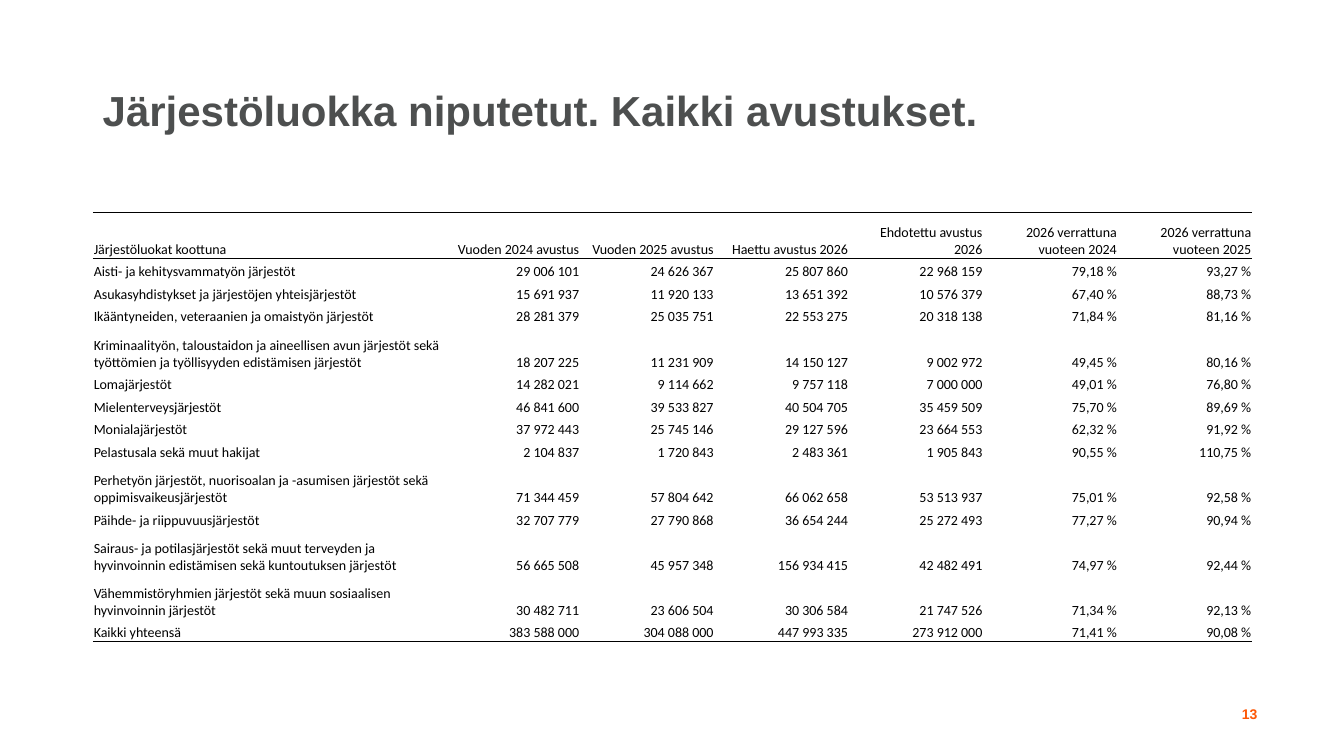
from lxml import etree
from pptx import Presentation
from pptx.dml.color import RGBColor
from pptx.enum.text import MSO_ANCHOR, PP_ALIGN
from pptx.oxml.ns import qn
from pptx.util import Inches, Pt

LEFT, RIGHT = PP_ALIGN.LEFT, PP_ALIGN.RIGHT
TOP, MIDDLE, BOTTOM = MSO_ANCHOR.TOP, MSO_ANCHOR.MIDDLE, MSO_ANCHOR.BOTTOM

SLIDE_WIDTH, SLIDE_HEIGHT = 13.33, 7.5
BLACK, GREY, ORANGE = "000000", "4D4F4F", "FD5705"

# Boxes: left, top, width, height in inches
TITLE_BOX = (0.92, 0.4, 8.99, 1.45)
TABLE_BOX = (0.92, 2.11, 11.5, 4.26)
NUMBER_BOX = (11.69, 6.95, 0.88, 0.4)

NAME_COLUMN_WIDTH = 3.5
RULE_WIDTH = 0.5
TALL_ROWS = {0, 4, 9, 11, 12}  # two lines of text each

ROWS = [
    ("Järjestöluokat koottuna", "Vuoden 2024 avustus", "Vuoden 2025 avustus",
     "Haettu avustus 2026", "Ehdotettu avustus 2026",
     "2026 verrattuna vuoteen 2024", "2026 verrattuna vuoteen 2025"),
    ("Aisti- ja kehitysvammatyön järjestöt",
     "29 006 101", "24 626 367", "25 807 860", "22 968 159", "79,18 %", "93,27 %"),
    ("Asukasyhdistykset ja järjestöjen yhteisjärjestöt",
     "15 691 937", "11 920 133", "13 651 392", "10 576 379", "67,40 %", "88,73 %"),
    ("Ikääntyneiden, veteraanien ja omaistyön järjestöt",
     "28 281 379", "25 035 751", "22 553 275", "20 318 138", "71,84 %", "81,16 %"),
    ("Kriminaalityön, taloustaidon ja aineellisen avun järjestöt sekä "
     "työttömien ja työllisyyden edistämisen järjestöt",
     "18 207 225", "11 231 909", "14 150 127", "9 002 972", "49,45 %", "80,16 %"),
    ("Lomajärjestöt",
     "14 282 021", "9 114 662", "9 757 118", "7 000 000", "49,01 %", "76,80 %"),
    ("Mielenterveysjärjestöt",
     "46 841 600", "39 533 827", "40 504 705", "35 459 509", "75,70 %", "89,69 %"),
    ("Monialajärjestöt",
     "37 972 443", "25 745 146", "29 127 596", "23 664 553", "62,32 %", "91,92 %"),
    ("Pelastusala sekä muut hakijat",
     "2 104 837", "1 720 843", "2 483 361", "1 905 843", "90,55 %", "110,75 %"),
    ("Perhetyön järjestöt, nuorisoalan ja -asumisen järjestöt sekä "
     "oppimisvaikeusjärjestöt",
     "71 344 459", "57 804 642", "66 062 658", "53 513 937", "75,01 %", "92,58 %"),
    ("Päihde- ja riippuvuusjärjestöt",
     "32 707 779", "27 790 868", "36 654 244", "25 272 493", "77,27 %", "90,94 %"),
    ("Sairaus- ja potilasjärjestöt sekä muut terveyden ja "
     "hyvinvoinnin edistämisen sekä kuntoutuksen järjestöt",
     "56 665 508", "45 957 348", "156 934 415", "42 482 491", "74,97 %", "92,44 %"),
    ("Vähemmistöryhmien järjestöt sekä muun sosiaalisen hyvinvoinnin järjestöt",
     "30 482 711", "23 606 504", "30 306 584", "21 747 526", "71,34 %", "92,13 %"),
    ("Kaikki yhteensä",
     "383 588 000", "304 088 000", "447 993 335", "273 912 000", "71,41 %", "90,08 %"),
]


def color(hex_text):
    return RGBColor.from_string(hex_text)


def write(paragraph, text, font_name, size, hex_color, bold=False, align=LEFT):
    paragraph.alignment = align
    run = paragraph.add_run()
    run.text = text
    run.font.name = font_name
    run.font.size = Pt(size)
    run.font.bold = bold
    run.font.color.rgb = color(hex_color)


def add_text(slide, box, text, size, hex_color, anchor=TOP, align=LEFT, spacing=1.0):
    frame = slide.shapes.add_textbox(*map(Inches, box)).text_frame
    frame.word_wrap = True
    frame.vertical_anchor = anchor
    paragraph = frame.paragraphs[0]
    paragraph.line_spacing = spacing
    write(paragraph, text, "Arial", size, hex_color, True, align)


def set_borders(cell, ruled_sides):
    """Draw a black rule on the given sides and clear the others."""
    properties = cell._tc.get_or_add_tcPr()
    for side in "LRTB":
        line = etree.SubElement(properties, qn(f"a:ln{side}"), w=str(Pt(RULE_WIDTH)))
        if side in ruled_sides:
            fill = etree.SubElement(line, qn("a:solidFill"))
            etree.SubElement(fill, qn("a:srgbClr"), val=BLACK)
        else:
            etree.SubElement(line, qn("a:noFill"))


def fill_cell(cell, text, align, ruled_sides):
    cell.margin_left = cell.margin_right = cell.margin_top = Inches(0.01)
    cell.margin_bottom = 0
    cell.vertical_anchor = BOTTOM
    set_borders(cell, ruled_sides)
    cell.fill.background()
    write(cell.text_frame.paragraphs[0], text, "Calibri", 10, BLACK, align=align)


def add_grant_table(slide, box):
    width, height = box[2:]
    row_count, column_count = len(ROWS), len(ROWS[0])
    table = slide.shapes.add_table(row_count, column_count, *map(Inches, box)).table
    table.first_row = table.horz_banding = False

    # A tall row takes two units of height, the others one
    unit = height / (row_count + len(TALL_ROWS))
    for index, row in enumerate(table.rows):
        row.height = Inches(unit * (2 if index in TALL_ROWS else 1))
    value_width = (width - NAME_COLUMN_WIDTH) / (column_count - 1)
    for index, column in enumerate(table.columns):
        column.width = Inches(value_width if index else NAME_COLUMN_WIDTH)

    # Rules around the header and under the total
    rules = {0: "TB", 1: "T", row_count - 1: "B"}
    for row_index, texts in enumerate(ROWS):
        for column_index, text in enumerate(texts):
            fill_cell(table.cell(row_index, column_index), text,
                      RIGHT if column_index else LEFT, rules.get(row_index, ""))


def main():
    presentation = Presentation()
    presentation.slide_width = Inches(SLIDE_WIDTH)
    presentation.slide_height = Inches(SLIDE_HEIGHT)
    slide = presentation.slides.add_slide(presentation.slide_layouts[6])

    add_text(slide, TITLE_BOX, "Järjestöluokka niputetut. Kaikki avustukset.",
             30, GREY, anchor=MIDDLE, spacing=0.9)
    add_text(slide, NUMBER_BOX, "13", 10, ORANGE, align=RIGHT)
    add_grant_table(slide, TABLE_BOX)

    presentation.save("out.pptx")


if __name__ == "__main__":
    main()
